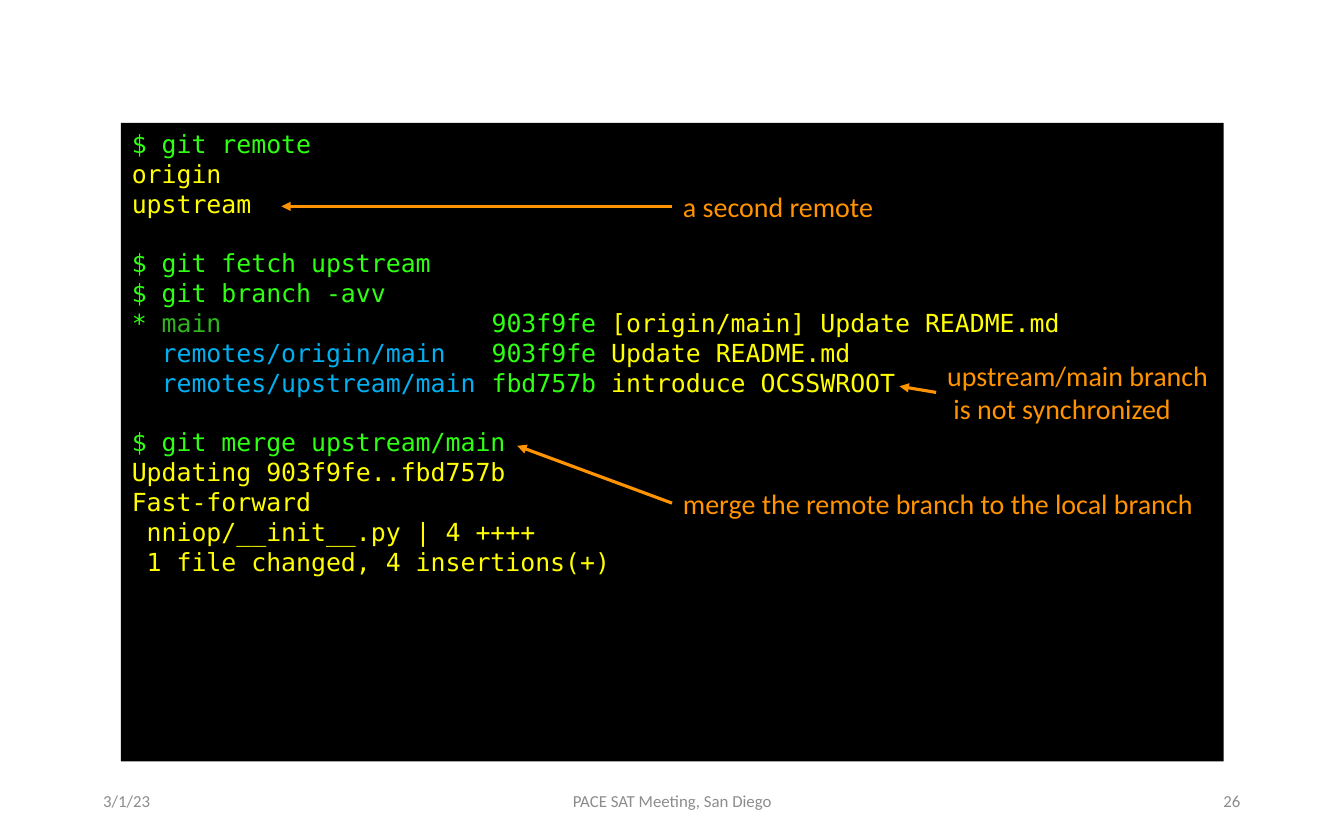
"""Build a slide that annotates a terminal session syncing a second git remote."""
from lxml import etree
from pptx import Presentation
from pptx import util as u
from pptx.dml.color import RGBColor
from pptx.enum import shapes, text
from pptx.oxml.ns import qn

BLACK = RGBColor(0x00, 0x00, 0x00)
PROMPT = RGBColor(0x2F, 0xFF, 0x12)
OUTPUT = RGBColor(0xFF, 0xFF, 0x00)
LOCAL = RGBColor(0x2F, 0xB4, 0x1D)
REMOTE = RGBColor(0x00, 0xB0, 0xF0)
NOTE = RGBColor(0xFF, 0x93, 0x00)
GREY = RGBColor(0x8C, 0x8C, 0x8C)

SANS, MONO = "Calibri", "DejaVu Sans Mono"
LINE_HEIGHT = u.Pt(19.2)
HASH_COLUMN = u.Cm(8.16)


def branch(mark, name, name_color, commit, message):
    """Return the coloured parts of one line of the branch list."""
    return [(mark, PROMPT), (name, name_color), (f"\t{commit} ", PROMPT), (message, OUTPUT)]


SESSION = [
    [
        [("$ git remote", PROMPT)],
        [("origin", OUTPUT)],
        [("upstream", OUTPUT)],
    ],
    [
        [("$ git fetch upstream", PROMPT)],
        [("$ git branch -avv", PROMPT)],
        branch("* ", "main", LOCAL, "903f9fe", "[origin/main] Update README.md"),
        branch("  ", "remotes/origin/main", REMOTE, "903f9fe", "Update README.md"),
        branch("  ", "remotes/upstream/main", REMOTE, "fbd757b", "introduce OCSSWROOT"),
    ],
    [
        [("$ git merge upstream/main", PROMPT)],
        [("Updating 903f9fe..fbd757b", OUTPUT)],
        [("Fast-forward", OUTPUT)],
        [(" nniop/__init__.py | 4 ++++", OUTPUT)],
        [(" 1 file changed, 4 insertions(+)", OUTPUT)],
    ],
]


def write(paragraph, words, *, color, size, font, align=text.PP_ALIGN.LEFT):
    """Add a formatted run to a paragraph."""
    paragraph.alignment = align
    run = paragraph.add_run()
    run.text = words
    run.font.name = font
    run.font.size = u.Pt(size)
    run.font.color.rgb = color


def next_paragraph(frame, index):
    """Return the first paragraph of a frame, or a new one after it."""
    return frame.add_paragraph() if index else frame.paragraphs[0]


def add_label(slide, box, lines, anchor=text.MSO_ANCHOR.TOP, **style):
    """Add a wrapped text box with one paragraph per line."""
    label = slide.shapes.add_textbox(*map(u.Cm, box))
    frame = label.text_frame
    frame.word_wrap = True
    frame.vertical_anchor = anchor
    for index, line in enumerate(lines):
        write(next_paragraph(frame, index), line, **style)
    return label


def add_terminal(slide):
    """Add the black terminal with its coloured session."""
    terminal = slide.shapes.add_shape(
        shapes.MSO_SHAPE.RECTANGLE, u.Cm(2.74), u.Cm(2.79), u.Cm(25.01), u.Cm(14.48))
    terminal.shadow.inherit = False
    terminal.fill.solid()
    terminal.fill.fore_color.rgb = BLACK
    terminal.line.fill.background()
    frame = terminal.text_frame
    frame.word_wrap = True
    frame.vertical_anchor = text.MSO_ANCHOR.TOP
    lines = [(block > 0 and row == 0, parts)
             for block, rows in enumerate(SESSION) for row, parts in enumerate(rows)]
    for index, (starts_block, parts) in enumerate(lines):
        paragraph = next_paragraph(frame, index)
        if any("\t" in words for words, _ in parts):
            stops = etree.SubElement(paragraph._p.get_or_add_pPr(), qn("a:tabLst"))
            etree.SubElement(stops, qn("a:tab"), pos=str(int(HASH_COLUMN)), algn="l")
        paragraph.line_spacing = LINE_HEIGHT
        if starts_block:
            paragraph.space_before = LINE_HEIGHT
        for words, color in parts:
            write(paragraph, words, color=color, size=16, font=MONO)


def add_note(slide, box, lines, target):
    """Add a note and an arrow from its left side to a target point."""
    note = add_label(slide, box, lines, color=NOTE, size=18, font=SANS)
    note.text_frame.auto_size = text.MSO_AUTO_SIZE.SHAPE_TO_FIT_TEXT
    end_x, end_y = map(u.Cm, target)
    arrow = slide.shapes.add_connector(
        shapes.MSO_CONNECTOR.STRAIGHT, note.left, note.top, end_x, end_y)
    arrow.begin_connect(note, 1)
    arrow.line.color.rgb = NOTE
    arrow.line.width = u.Pt(2)
    etree.SubElement(arrow.line._get_or_add_ln(), qn("a:tailEnd"), type="triangle")
    etree.SubElement(arrow._element.spPr, qn("a:effectLst"))


def add_footer(slide):
    """Add the date, the meeting and the slide number."""
    align = text.PP_ALIGN
    for left, width, words, side in (
        (2.09, 6.86, "3/1/23", align.LEFT),
        (10.1, 10.29, "PACE SAT Meeting, San Diego", align.CENTER),
        (21.52, 6.86, "26", align.RIGHT),
    ):
        add_label(slide, (left, 17.65, width, 1.02), [words], text.MSO_ANCHOR.MIDDLE,
                  color=GREY, size=10.8, font=SANS, align=side)


def main():
    """Build and save the slide."""
    deck = Presentation()
    deck.slide_width, deck.slide_height = u.Cm(30.48), u.Cm(19.05)
    slide = deck.slides.add_slide(deck.slide_layouts[6])
    add_footer(slide)
    add_terminal(slide)
    add_note(slide, (15.24, 4.17, 12.5, 1.02), ["a second remote"], (6.38, 4.68))
    add_note(slide, (21.23, 8, 6.5, 1.8),
             ["upstream/main branch", " is not synchronized"], (20.4, 8.76))
    add_note(slide, (15.24, 10.9, 12.5, 1.02),
             ["merge the remote branch to the local branch"], (11.73, 10.11))
    deck.save("out.pptx")


if __name__ == "__main__":
    main()
